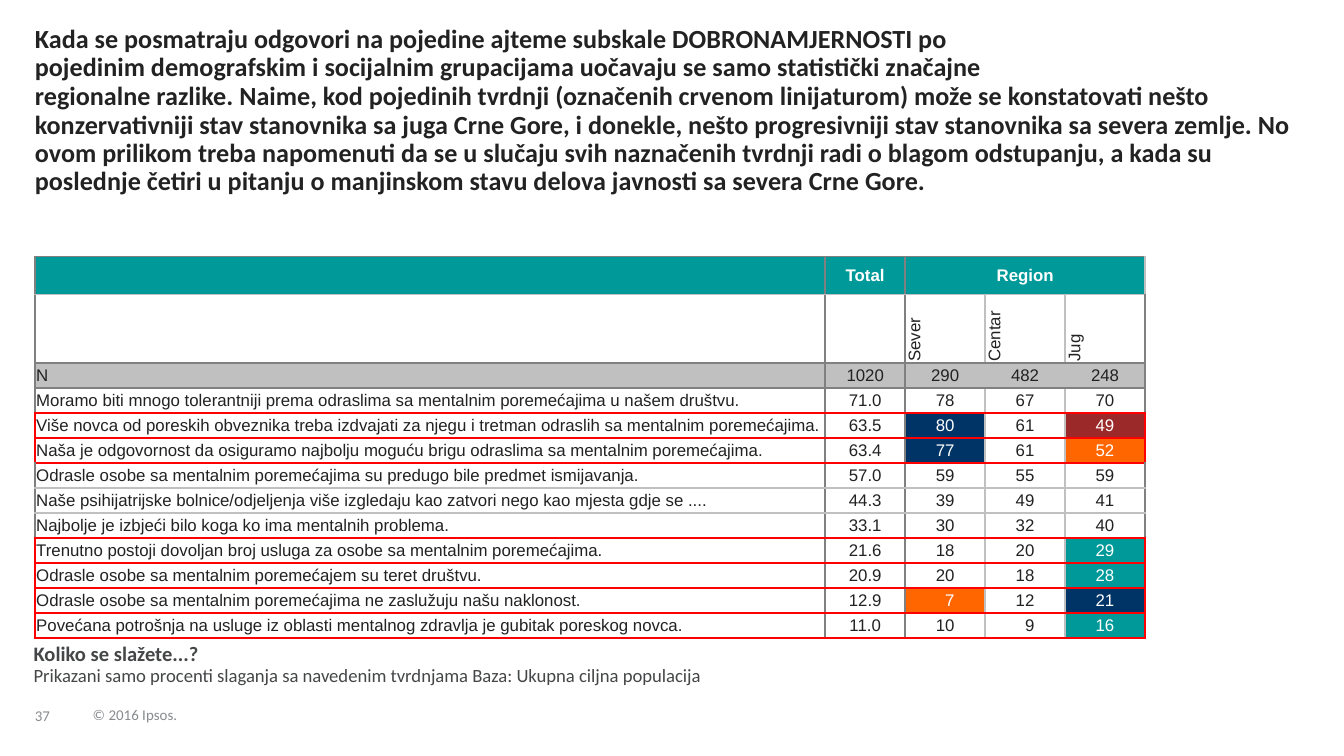
"""Build the slide on regional differences in agreement with the benevolence subscale."""
from lxml.etree import SubElement
from pptx import Presentation
from pptx.dml.color import RGBColor
from pptx.enum.text import MSO_ANCHOR, PP_ALIGN
from pptx.oxml.ns import qn
from pptx.util import Inches, Pt

COLORS = {
    "title": "222223",
    "note": "444647",
    "footer": "888B8D",
    "white": "FFFFFF",
    "teal": "009999",
    "navy": "003366",
    "maroon": "9B2929",
    "orange": "FF6600",
    "silver": "C0C0C0",
    "gray": "808080",
    "red": "FF0000",
}


def style_font(font, name, size, color, bold=False):
    font.name = name
    font.size = Pt(size)
    font.bold = bold
    font.color.rgb = RGBColor.from_string(COLORS[color])


def add_text(slide, box, text, size, color, bold=False, spacing=0.9, anchor=MSO_ANCHOR.TOP, wrap=True):
    shape = slide.shapes.add_textbox(*[Inches(length) for length in box])
    frame = shape.text_frame
    frame.margin_left = frame.margin_top = frame.margin_right = frame.margin_bottom = 0
    frame.word_wrap = wrap
    frame.vertical_anchor = anchor
    paragraph = frame.paragraphs[0]
    paragraph.text = text
    paragraph.line_spacing = spacing
    style_font(paragraph.font, "Calibri", size, color, bold)
    return paragraph


presentation = Presentation()
presentation.slide_width = Inches(10)
presentation.slide_height = Inches(10) * 9 // 16
slide = presentation.slides.add_slide(presentation.slide_layouts[6])

for box, text in [((0.26, 5.13, 0.34, 0.26), "37"), ((0.69, 5.2, 0.76, 0.18), "© 2016 Ipsos.")]:
    add_text(slide, box, text, 8, "footer", spacing=0.85, anchor=MSO_ANCHOR.BOTTOM, wrap=False)

add_text(
    slide, (0.26, 0.19, 7.17, 0.42),
    "Kada se posmatraju odgovori na pojedine ajteme subskale DOBRONAMJERNOSTI po pojedinim "
    "demografskim i socijalnim grupacijama uočavaju se samo statistički značajne",
    14, "title", bold=True,
)
add_text(
    slide, (0.26, 0.62, 9.5, 0.85),
    "regionalne razlike. Naime, kod pojedinih tvrdnji (označenih crvenom linijaturom) može se "
    "konstatovati nešto konzervativniji stav stanovnika sa juga Crne Gore, i donekle, nešto "
    "progresivniji stav stanovnika sa severa zemlje. No ovom prilikom treba napomenuti da se u "
    "slučaju svih naznačenih tvrdnji radi o blagom odstupanju, a kada su poslednje četiri u "
    "pitanju o manjinskom stavu delova javnosti sa severa Crne Gore.",
    14, "title", bold=True,
)

note = add_text(slide, (0.25, 4.78, 5.36, 0.35), "", 10, "note", spacing=0.95)
question = note.add_run()
question.text = "Koliko se slažete...?"
style_font(question.font, "Calibri", 11, "note", bold=True)
note.add_line_break()
base = note.add_run()
base.text = "Prikazani samo procenti slaganja sa navedenim tvrdnjama Baza: Ukupna ciljna populacija"
style_font(base.font, "Calibri", 10, "note")

rows = [
    ("", "Total", "Region", "", ""),
    ("", "", "Sever", "Centar", "Jug"),
    ("N", "1020", "290", "482", "248"),
    ("Moramo biti mnogo tolerantniji prema odraslima sa mentalnim poremećajima u našem društvu.",
     "71.0", "78", "67", "70"),
    ("Više novca od poreskih obveznika treba izdvajati za njegu i tretman odraslih sa mentalnim poremećajima.",
     "63.5", "80", "61", "49"),
    ("Naša je odgovornost da osiguramo najbolju moguću brigu odraslima sa mentalnim poremećajima.",
     "63.4", "77", "61", "52"),
    ("Odrasle osobe sa mentalnim poremećajima su predugo bile predmet ismijavanja.",
     "57.0", "59", "55", "59"),
    ("Naše psihijatrijske bolnice/odjeljenja više izgledaju kao zatvori nego kao mjesta gdje se ....",
     "44.3", "39", "49", "41"),
    ("Najbolje je izbjeći bilo koga ko ima mentalnih problema.", "33.1", "30", "32", "40"),
    ("Trenutno postoji dovoljan broj usluga za osobe sa mentalnim poremećajima.",
     "21.6", "18", "20", "29"),
    ("Odrasle osobe sa mentalnim poremećajem su teret društvu.", "20.9", "20", "18", "28"),
    ("Odrasle osobe sa mentalnim poremećajima ne zaslužuju našu naklonost.", "12.9", "7", "12", "21"),
    ("Povećana potrošnja na usluge iz oblasti mentalnog zdravlja je gubitak poreskog novca.",
     "11.0", "10", "9", "16"),
]
highlights = {
    (4, 2): "navy", (4, 4): "maroon", (5, 2): "navy", (5, 4): "orange", (9, 4): "teal",
    (10, 4): "teal", (11, 2): "orange", (11, 4): "navy", (12, 4): "teal",
}
outlined_rows = {4, 5, 9, 10, 11, 12}
horizontal_lines = ["gray", "silver", "gray", "gray"] + ["red"] * 3 + ["silver"] * 2 + ["red"] * 5
vertical_lines = ["gray", "gray", "gray", "silver", "silver", "gray"]
outlined_vertical_lines = ["red"] + vertical_lines[1:-1] + ["red"]

table_width, table_height = 8.26, 2.84
label_width = 5.88
value_width = (table_width - label_width) / 4
column_widths = [label_width] + [value_width] * 4
header_heights = [0.28, 0.51]
body_height = (table_height - sum(header_heights)) / (len(rows) - 2)
row_heights = header_heights + [body_height] * (len(rows) - 2)

table = slide.shapes.add_table(
    len(rows), len(column_widths), Inches(0.26), Inches(1.91), Inches(table_width), Inches(table_height)
).table
table.first_row = False
table.horz_banding = False
for column, width in zip(table.columns, column_widths):
    column.width = Inches(width)
for row, height in zip(table.rows, row_heights):
    row.height = Inches(height)
table.cell(0, 2).merge(table.cell(0, 4))

for row_index, values in enumerate(rows):
    verticals = outlined_vertical_lines if row_index in outlined_rows else vertical_lines
    for column_index, value in enumerate(values):
        cell = table.cell(row_index, column_index)
        cell.margin_left = cell.margin_right = Inches(0.01)
        cell.margin_top = cell.margin_bottom = 0
        cell.vertical_anchor = MSO_ANCHOR.MIDDLE
        properties = cell._tc.get_or_add_tcPr()
        edges = {
            "a:lnL": verticals[column_index],
            "a:lnR": verticals[column_index + 1],
            "a:lnT": horizontal_lines[row_index],
            "a:lnB": horizontal_lines[row_index + 1],
        }
        for tag, edge_color in edges.items():
            line = SubElement(properties, qn(tag), w=str(Pt(1)))
            SubElement(SubElement(line, qn("a:solidFill")), qn("a:srgbClr"), val=COLORS[edge_color])

        header_fill = {0: "teal", 2: "silver"}.get(row_index)
        fill_color = highlights.get((row_index, column_index), header_fill)
        if fill_color:
            cell.fill.solid()
            cell.fill.fore_color.rgb = RGBColor.from_string(COLORS[fill_color])
        else:
            cell.fill.background()

        paragraph = cell.text_frame.paragraphs[0]
        paragraph.text = value
        if not value:
            SubElement(paragraph._p, qn("a:endParaRPr"), sz="900")
        if row_index == 1 and value:
            properties.set("vert", "vert270")
            cell.margin_bottom = Inches(0.01)
        elif column_index > 0:
            paragraph.alignment = PP_ALIGN.CENTER
        if len(value) == 1 and column_index > 0:
            cell.margin_left = Inches(0.08)
        light_text = row_index == 0 or (row_index, column_index) in highlights
        style_font(paragraph.font, "Arial", 9, "white" if light_text else "title", bold=row_index == 0)

presentation.save("out.pptx")
